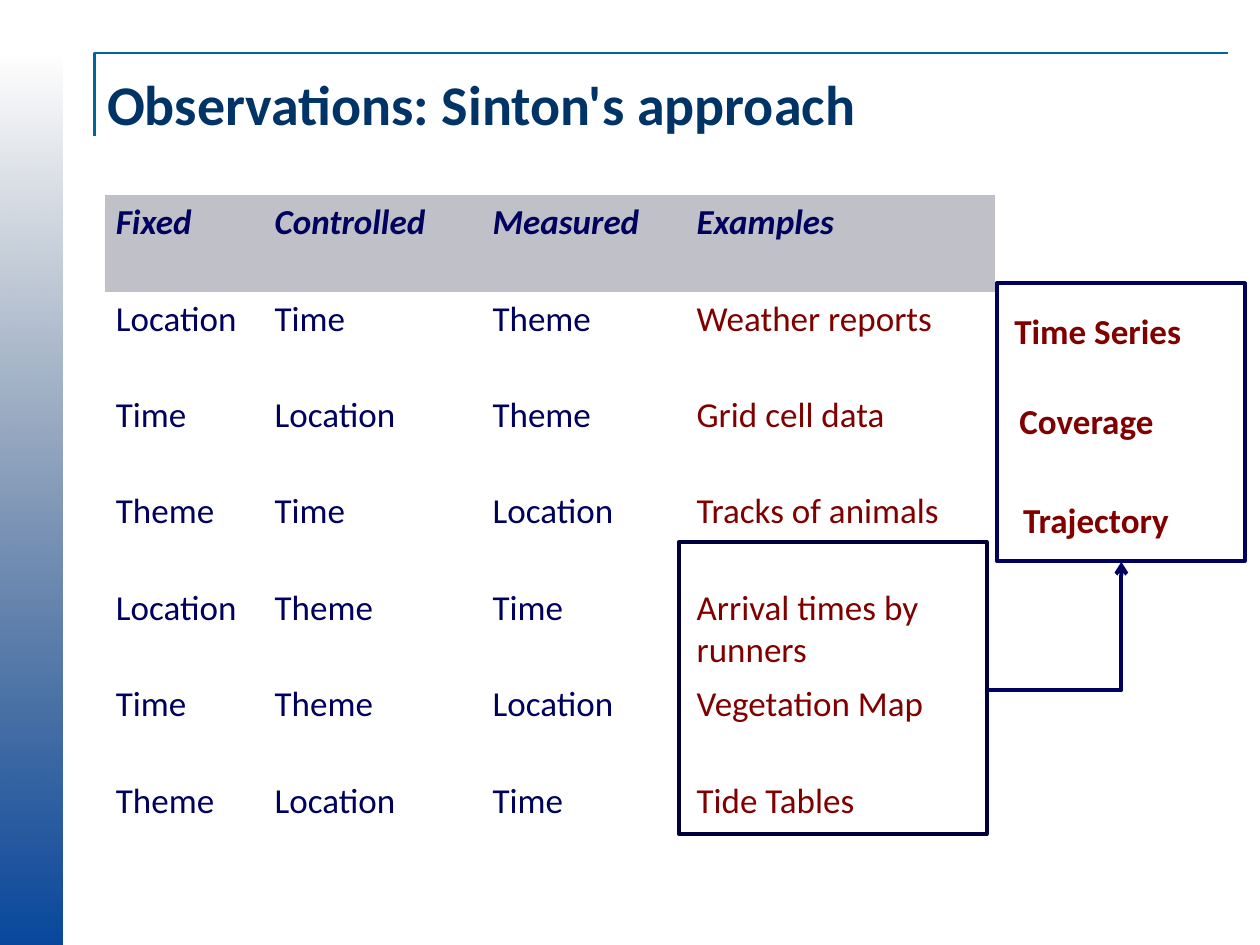
from dataclasses import dataclass

from lxml import etree
from pptx import Presentation
from pptx import util as u
from pptx.dml.color import RGBColor
from pptx.enum import shapes, text
from pptx.oxml import ns


@dataclass(frozen=True)
class Theme:
    font: str = "Calibri"
    title: str = "003366"
    rule: str = "006699"
    navy: str = "00005E"
    dark: str = "00003E"
    red: str = "800000"
    head: str = "C0C0C8"
    blue: str = "08479C"
    fade: str = "042148"
    large: int = 32
    body: int = 20
    thin: float = 1.5
    thick: float = 2.25


def rgb(code):
    return RGBColor.from_string(code)


class Deck:
    """Holds the style and the current slide, and draws each kind of element."""

    def __init__(self, theme):
        self.theme = theme
        self.file = Presentation()
        self.file.slide_width = u.Inches(10)
        self.file.slide_height = u.Inches(7.5)
        self.slide = self.file.slides.add_slide(self.file.slide_layouts[5])
        self.items = self.slide.shapes

    def say(self, frame, words, color, size, bold=False, slant=False):
        para = frame.paragraphs[0]
        para.alignment = text.PP_ALIGN.LEFT
        run = para.add_run()
        run.text = words
        font = run.font
        font.name, font.size = self.theme.font, u.Pt(size)
        font.bold, font.italic = bold, slant
        font.color.rgb = rgb(color)
        return para

    def inset(self, frame, left, top, right, bottom):
        frame.margin_left, frame.margin_right = u.Inches(left), u.Inches(right)
        frame.margin_top, frame.margin_bottom = u.Inches(top), u.Inches(bottom)

    def stroke(self, line, color, width):
        line.color.rgb = rgb(color)
        line.width = u.Pt(width)

    def title(self, words, box):
        hold = self.items.title
        hold.left, hold.top, hold.width, hold.height = map(u.Inches, box)
        frame = hold.text_frame
        frame.auto_size = text.MSO_AUTO_SIZE.NONE
        frame.vertical_anchor = text.MSO_ANCHOR.MIDDLE
        self.inset(frame, 0.1, 0.01, 0.1, 0.05)
        self.say(frame, words, self.theme.title, self.theme.large, True)

    def band(self, box):
        bar = self.items.add_shape(shapes.MSO_SHAPE.RECTANGLE, *map(u.Inches, box))
        bar.shadow.inherit = False
        bar.line.fill.background()
        bar.fill.gradient()
        bar.fill.gradient_angle = 90
        stops = bar.fill.gradient_stops
        for stop, color, spot in zip(stops, (self.theme.blue, self.theme.fade), (0, 1)):
            stop.color.rgb = rgb(color)
            stop.position = spot
        tint = list(bar.element.spPr.iter(ns.qn("a:srgbClr")))[-1]
        etree.SubElement(tint, ns.qn("a:alpha"), val="0")

    def rule(self, first, *rest):
        pen = self.items.build_freeform(*map(u.Inches, first))
        pen.add_line_segments([tuple(map(u.Inches, spot)) for spot in rest], close=False)
        bend = pen.convert_to_shape()
        bend.shadow.inherit = False
        bend.fill.background()
        self.stroke(bend.line, self.theme.rule, self.theme.thin)

    def table(self, rows, left, top, widths, height):
        grid = self.items.add_table(
            len(rows), len(widths), u.Inches(left), u.Inches(top),
            u.Inches(sum(widths)), u.Inches(height)).table
        grid.horz_banding = False
        style = next(grid._tbl.iter(ns.qn("a:tableStyleId")))
        style.text = "{2D5ABB26-0587-4C30-8999-92F81FD0307C}"
        for col, width in zip(grid.columns, widths):
            col.width = u.Inches(width)
        for r, row in enumerate(rows):
            grid.rows[r].height = u.Inches(height / len(rows))
            for c, words in enumerate(row):
                self.cell(grid.cell(r, c), words, r == 0, c == len(row) - 1)

    def cell(self, cell, words, head, last):
        self.inset(cell, 0.09, 0.05, 0.09, 0.05)
        if head:
            cell.fill.solid()
            cell.fill.fore_color.rgb = rgb(self.theme.head)
        else:
            cell.fill.background()
        color = self.theme.red if last and not head else self.theme.navy
        para = self.say(cell.text_frame, words, color, self.theme.body, head, head)
        para.line_spacing = 0.98

    def label(self, words, box):
        frame = self.items.add_textbox(*map(u.Inches, box)).text_frame
        frame.word_wrap = True
        self.inset(frame, 0.09, 0.05, 0.09, 0.04)
        self.say(frame, words, self.theme.red, self.theme.body, True)

    def frame(self, kind, box, color):
        shape = self.items.add_shape(kind, *map(u.Inches, box))
        shape.shadow.inherit = False
        shape.fill.background()
        self.stroke(shape.line, color, self.theme.thick)
        return shape

    def arrow(self, start, end):
        link = self.items.add_connector(
            shapes.MSO_CONNECTOR.ELBOW, *map(u.Inches, start + end))
        self.stroke(link.line, self.theme.navy, self.theme.thick)
        props = link._element.spPr
        props.find(ns.qn("a:prstGeom")).set("prst", "bentConnector2")
        etree.SubElement(props.find(ns.qn("a:ln")), ns.qn("a:tailEnd"), type="arrow")
        etree.SubElement(props, ns.qn("a:effectLst"))


def main():
    theme = Theme()
    deck = Deck(theme)
    deck.band((0, 0.42, 0.5, 7.08))
    deck.rule((0.75, 1.08), (0.75, 0.42), (9.75, 0.42))
    deck.title("Observations: Sinton's approach", (0.75, 0.42, 8.92, 0.83))
    rows = [
        ("Fixed", "Controlled", "Measured", "Examples"),
        ("Location", "Time", "Theme", "Weather reports"),
        ("Time", "Location", "Theme", "Grid cell data"),
        ("Theme", "Time", "Location", "Tracks of animals"),
        ("Location", "Theme", "Time", "Arrival times by runners"),
        ("Time", "Theme", "Location", "Vegetation Map"),
        ("Theme", "Location", "Time", "Tide Tables"),
    ]
    deck.table(rows, 0.83, 1.55, (1.26, 1.73, 1.62, 2.46), 5.35)
    deck.label("Time Series", (7.96, 2.41, 2.04, 0.48))
    deck.label("Coverage", (8, 3.12, 1.97, 0.49))
    deck.label("Trajectory", (8.03, 3.91, 1.96, 0.48))
    kinds = shapes.MSO_SHAPE
    group = deck.frame(kinds.ROUNDED_RECTANGLE, (5.39, 4.3, 2.44, 2.32), theme.dark)
    group.adjustments[0] = 0
    deck.frame(kinds.RECTANGLE, (7.91, 2.25, 1.97, 2.2), theme.navy)
    deck.arrow((7.84, 5.48), (8.9, 4.46))
    deck.file.save("out.pptx")


if __name__ == "__main__":
    main()
